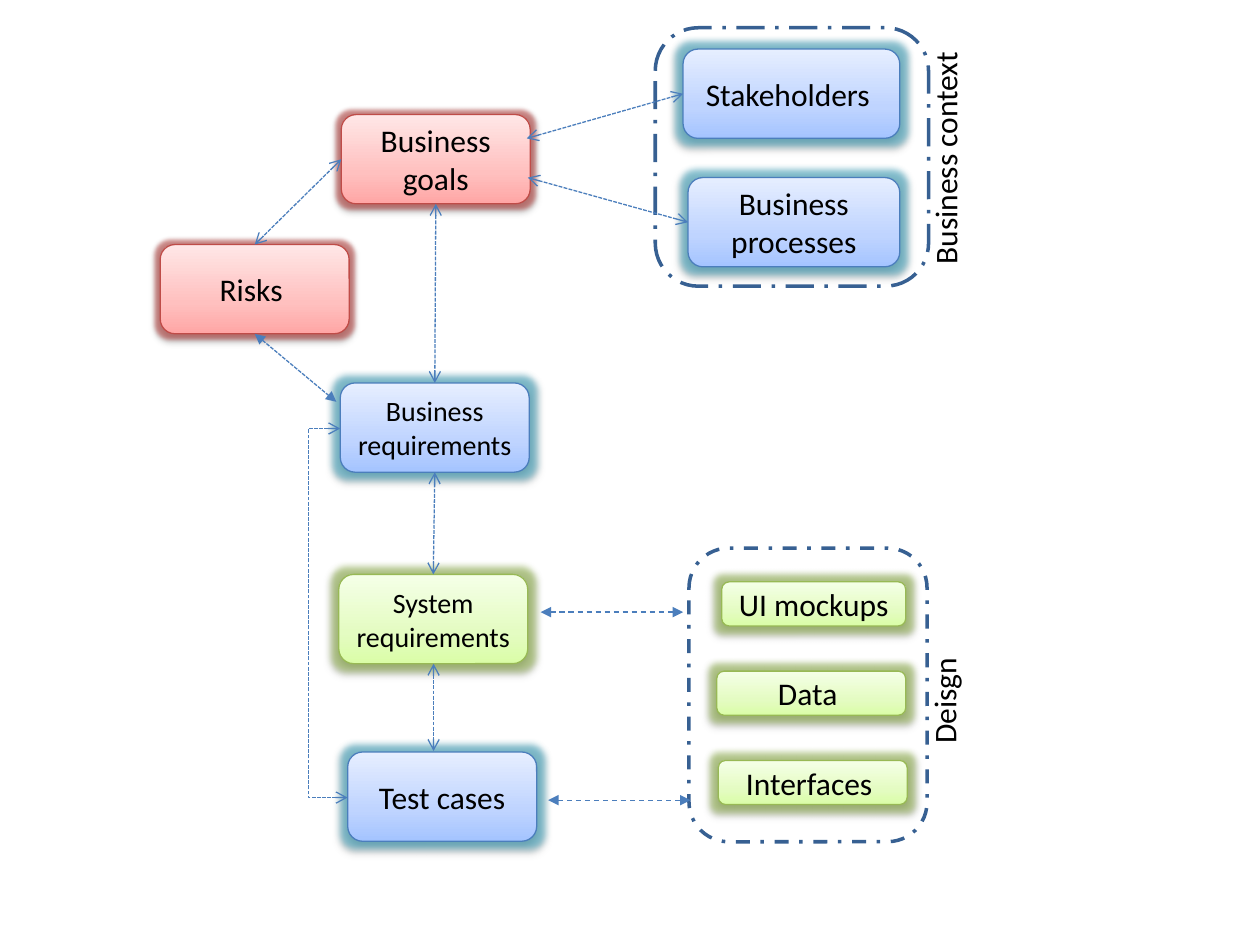
from collections import namedtuple

from lxml.etree import SubElement
from pptx import Presentation
from pptx.dml.color import RGBColor
from pptx.enum.dml import MSO_LINE_DASH_STYLE as Dash
from pptx.enum.shapes import MSO_CONNECTOR as Link, MSO_SHAPE as Shape
from pptx.enum.text import MSO_ANCHOR as Anchor, MSO_AUTO_SIZE as AutoSize, PP_ALIGN as Align
from pptx.oxml.ns import qn
from pptx.util import Cm, Pt

Box = namedtuple("Box", "left top width height")
Style = namedtuple("Style", "bottom middle top line glow radius")

BLACK = RGBColor(0, 0, 0)
NAVY = RGBColor(0x37, 0x60, 0x92)
LINK_BLUE = RGBColor(0x4B, 0x7E, 0xBC)
RED = Style(RGBColor(0xFF, 0xA6, 0xA5), RGBColor(0xFF, 0xC0, 0xBF), RGBColor(0xFF, 0xE7, 0xE7),
            RGBColor(0xBF, 0x4C, 0x48), RGBColor(0xC0, 0x50, 0x4D), Pt(5))
BLUE = Style(RGBColor(0xA4, 0xC4, 0xFF), RGBColor(0xBF, 0xD4, 0xFF), RGBColor(0xE6, 0xEE, 0xFF),
             LINK_BLUE, RGBColor(0x4B, 0xAC, 0xC6), Pt(8))
GREEN = Style(RGBColor(0xDA, 0xFD, 0xA7), RGBColor(0xE4, 0xFC, 0xC2), RGBColor(0xF5, 0xFF, 0xE7),
              RGBColor(0x98, 0xB9, 0x55), RGBColor(0x9B, 0xBB, 0x59), Pt(8))
FONT = "Calibri"
NODE_WIDTH, NODE_HEIGHT, ITEM_HEIGHT = 3.81, 1.8, 0.89
TOP, LEFT, BOTTOM = 0, 1, 2  # connection sites of a rounded rectangle


def add_xml(parent, tag, **attributes):
    return SubElement(parent, qn(tag), {key: str(value) for key, value in attributes.items()})


def add_color(parent, color, alpha=None):
    node = add_xml(parent, "a:srgbClr", val=color)
    if alpha is not None:
        add_xml(node, "a:alpha", val=alpha * 1000)


def write(frame, text, size):
    para = frame.paragraphs[0]
    para.alignment = Align.CENTER
    span = para.add_run()
    span.text = text
    span.font.name, span.font.size, span.font.color.rgb = FONT, Pt(size), BLACK


def rounded(page, box):
    shape = page.shapes.add_shape(Shape.ROUNDED_RECTANGLE, *map(Cm, box))
    shape.shadow.inherit = False
    return shape


def add_node(page, box, text, style, size=18):
    """A rounded box with a vertical gradient, a glow and a soft shadow."""
    node = rounded(page, box)
    node.fill.gradient()
    node.fill.gradient_angle = 90
    properties = node._element.spPr
    stops = properties.find(".//" + qn("a:gsLst"))
    for stop in list(stops):
        stops.remove(stop)
    for position, color in ((0, style.bottom), (35, style.middle), (100, style.top)):
        add_color(add_xml(stops, "a:gs", pos=position * 1000), color)
    node.line.color.rgb, node.line.width = style.line, Pt(0.75)

    effects = properties.find(qn("a:effectLst"))
    add_color(add_xml(effects, "a:glow", rad=style.radius), style.glow, 60)
    shadow = add_xml(effects, "a:outerShdw", blurRad=Pt(3.1), dist=Pt(1.6),
                     dir=5400000, rotWithShape=0)
    add_color(shadow, BLACK, 38)

    node.text_frame.word_wrap = True
    node.text_frame.vertical_anchor = Anchor.MIDDLE
    write(node.text_frame, text, size)
    return node


def add_link(page, start, end, dash=Dash.SQUARE_DOT, head="arrow", kind=Link.STRAIGHT):
    """Double-headed link; each end is an (x, y) point or a (shape, site) pair."""
    ends = [(0, 0) if hasattr(place[0], "shape_id") else place for place in (start, end)]
    link = page.shapes.add_connector(kind, *(Cm(value) for point in ends for value in point))
    if hasattr(start[0], "shape_id"):
        link.begin_connect(*start)
    if hasattr(end[0], "shape_id"):
        link.end_connect(*end)
    link.line.color.rgb, link.line.width, link.line.dash_style = LINK_BLUE, Pt(0.75), dash
    outline = link.line._get_or_add_ln()
    for tag in ("a:headEnd", "a:tailEnd"):
        add_xml(outline, tag, type=head)
    add_xml(link._element.spPr, "a:effectLst")
    return link


def add_elbow(page, start, end, bend):
    """Elbow link whose vertical run lies at x = bend."""
    link = add_link(page, start, end, kind=Link.ELBOW)
    guides = link._element.spPr.find(qn("a:prstGeom")).get_or_add_avLst()
    ratio = (start[0] - bend) / (start[0] - end[0])
    add_xml(guides, "a:gd", name="adj1", fmla=f"val {round(ratio * 100000)}")


def add_group(page, box, dash, label, label_box, items, style):
    """Dashed frame with items and an upright label, all offset from the frame's corner."""
    def inside(offset):
        return Box(box.left + offset.left, box.top + offset.top, offset.width, offset.height)

    nodes = [add_node(page, inside(offset), text, style) for text, offset in items]
    frame = rounded(page, box)
    frame.fill.background()
    frame.line.color.rgb, frame.line.width, frame.line.dash_style = NAVY, Pt(2), dash

    caption = page.shapes.add_textbox(*map(Cm, inside(label_box))).text_frame
    caption.word_wrap = False
    caption.auto_size = AutoSize.SHAPE_TO_FIT_TEXT
    caption._txBody.bodyPr.set("vert", "vert270")
    write(caption, label, 18)
    return nodes


def add_business_context(page, box):
    items = (("Stakeholders ", Box(0.56, 0.43, 4.37, NODE_HEIGHT)),
             ("Business processes", Box(0.66, 3.02, 4.27, NODE_HEIGHT)))
    return add_group(page, box, Dash.LONG_DASH_DOT, "Business context",
                     Box(5.33, 0.33, 1.27, 4.6), items, BLUE)


def add_design(page, box):
    columns = (("UI mockups", 0.66, 3.71), ("Data ", 0.56, 3.81), ("Interfaces ", 0.59, 3.81))
    items = [(text, Box(left, 0.68 + 1.8 * row, width, ITEM_HEIGHT))
             for row, (text, left, width) in enumerate(columns)]
    add_group(page, box, Dash.DASH_DOT, "Deisgn ", Box(4.63, 1.93, 1.27, 2.16), items, GREEN)


def add_main_flow(page, box):
    """Goals, risks, requirements and tests with the links between them."""
    def node(left, top, *details):
        place = Box(box.left + left, box.top + top, NODE_WIDTH, NODE_HEIGHT)
        return add_node(page, place, *details)

    def point(x, y):
        return box.left + x, box.top + y

    goals = node(3.65, 0, "Business goals", RED)
    business = node(3.63, 5.41, "Business requirements", BLUE, 16)
    system = node(3.6, 9.27, "System requirements", GREEN, 16)
    node(3.78, 12.85, "Test cases", BLUE)
    risks = node(0, 2.62, "Risks ", RED)

    for start, end in (((goals, BOTTOM), (business, TOP)),
                       ((business, BOTTOM), (system, TOP)),
                       ((goals, LEFT), (risks, TOP)),
                       (point(5.51, 11.07), point(5.51, 12.83))):
        add_link(page, start, end)
    add_link(page, point(3.55, 5.79), (risks, BOTTOM), head="triangle")
    add_elbow(page, point(3.78, 13.77), point(3.63, 6.33), box.left + 2.99)


def build_page(page):
    add_main_flow(page, Box(3.23, 2.31, 7.59, 14.65))
    stakeholders, processes = add_business_context(page, Box(13.21, 0.56, 5.51, 5.21))
    add_design(page, Box(13.89, 11.05, 4.8, 5.92))
    add_link(page, (10.62, 2.79), (stakeholders, LEFT))
    add_link(page, (10.64, 3.58), (processes, LEFT))
    for left, y in ((10.9, 12.34), (11.05, 16.13)):
        add_link(page, (left, y), (left + 2.87, y), Dash.DASH, "triangle")


def main():
    deck = Presentation()
    deck.slide_width, deck.slide_height = Cm(25.4), Cm(19.05)
    build_page(deck.slides.add_slide(deck.slide_layouts[6]))
    deck.save("out.pptx")


if __name__ == "__main__":
    main()
